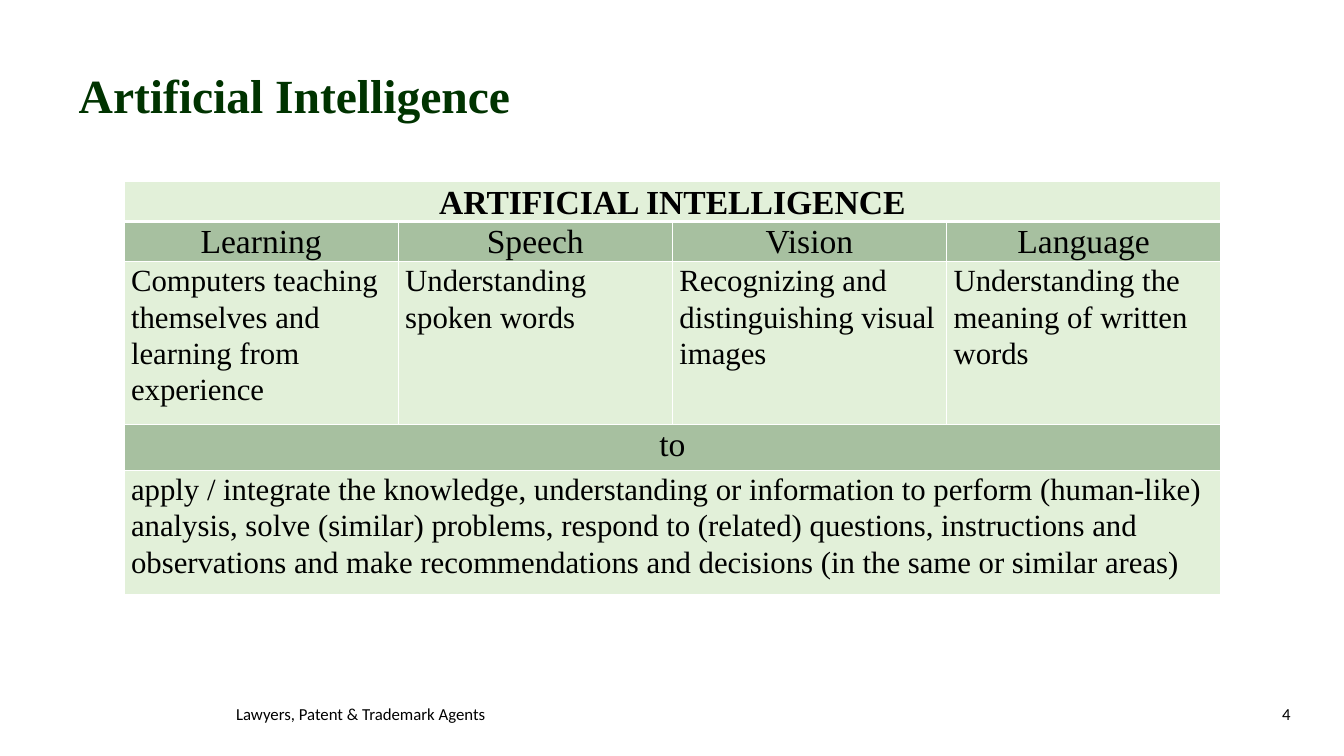
import pptx
import pptx.dml.color
import pptx.enum.text
import pptx.oxml
import pptx.oxml.ns
import pptx.util
from dataclasses import dataclass

Pt = pptx.util.Pt
RGBColor = pptx.dml.color.RGBColor
Align = pptx.enum.text.PP_ALIGN
Anchor = pptx.enum.text.MSO_ANCHOR


@dataclass(frozen=True)
class Theme:
    serif: str = "Times New Roman"
    sans: str = "Calibri"
    ink: str = "000000"
    title_green: str = "003300"
    pale_green: str = "E2F0D9"
    sage: str = "A7C0A0"
    border: str = "FFFFFF"
    title_size: int = 34
    heading_size: int = 24
    body_size: int = 22
    footer_size: int = 12


theme = Theme()


def write_text(text_frame, text, font_name, size, color, alignment, bold=False, spacing=1):
    paragraph = text_frame.paragraphs[0]
    paragraph.alignment = alignment
    paragraph.line_spacing = spacing
    run = paragraph.add_run()
    run.text = text
    run.font.name = font_name
    run.font.size = Pt(size)
    run.font.bold = bold
    run.font.color.rgb = RGBColor.from_string(color)


def add_borders(cell, bottom_width):
    properties = cell._tc.get_or_add_tcPr()
    for side, width in (("L", 1), ("R", 1), ("T", 1), ("B", bottom_width)):
        properties.append(pptx.oxml.parse_xml(
            f'<a:ln{side} {pptx.oxml.ns.nsdecls("a")} w="{Pt(width)}">'
            f'<a:solidFill><a:srgbClr val="{theme.border}"/></a:solidFill></a:ln{side}>'
        ))


presentation = pptx.Presentation()
presentation.slide_width = Pt(960)
presentation.slide_height = Pt(540)
slide = presentation.slides.add_slide(presentation.slide_layouts[5])

title = slide.shapes.title
title.left, title.top, title.width, title.height = Pt(49), Pt(45), Pt(686), Pt(50.4)
title.text_frame.vertical_anchor = Anchor.MIDDLE
write_text(title.text_frame, "Artificial Intelligence", theme.serif, theme.title_size,
           theme.title_green, Align.LEFT, bold=True, spacing=0.9)

table_rows = [
    (28.4, True, theme.pale_green, ["ARTIFICIAL INTELLIGENCE"]),
    (28.8, True, theme.sage, ["Learning", "Speech", "Vision", "Language"]),
    (116, False, theme.pale_green, [
        "Computers teaching themselves and learning from experience",
        "Understanding spoken words",
        "Recognizing and distinguishing visual images",
        "Understanding the meaning of written words",
    ]),
    (33, True, theme.sage, ["to"]),
    (88.6, False, theme.pale_green, [
        "apply / integrate the knowledge, understanding or information to perform "
        "(human-like) analysis, solve (similar) problems, respond to (related) questions, "
        "instructions and observations and make recommendations and decisions "
        "(in the same or similar areas)"
    ]),
]
column_count = 4
table_height = sum(height for height, *_ in table_rows)
table = slide.shapes.add_table(len(table_rows), column_count, Pt(88.6), Pt(129.8),
                               Pt(783.4), Pt(table_height)).table

for row_index, (height, is_heading, fill_color, texts) in enumerate(table_rows):
    table.rows[row_index].height = Pt(height)
    if len(texts) == 1:
        table.cell(row_index, 0).merge(table.cell(row_index, column_count - 1))
    for column_index in range(column_count):
        cell = table.cell(row_index, column_index)
        add_borders(cell, 3 if row_index == 0 else 1)
        cell.fill.solid()
        cell.fill.fore_color.rgb = RGBColor.from_string(fill_color)
        cell.margin_left = cell.margin_right = Pt(5)
        cell.margin_top = cell.margin_bottom = 0
    for column_index, text in enumerate(texts):
        write_text(table.cell(row_index, column_index).text_frame, text, theme.serif,
                   theme.heading_size if is_heading else theme.body_size, theme.ink,
                   Align.CENTER if is_heading else Align.LEFT,
                   bold=row_index == 0, spacing=1.07)

for left, text, alignment in (
    (161.5, "Lawyers, Patent & Trademark Agents", Align.LEFT),
    (687, "4", Align.RIGHT),
):
    footer = slide.shapes.add_textbox(Pt(left), Pt(499), Pt(242), Pt(21.8))
    footer.text_frame.word_wrap = True
    write_text(footer.text_frame, text, theme.sans, theme.footer_size, theme.ink, alignment)

presentation.save("out.pptx")
